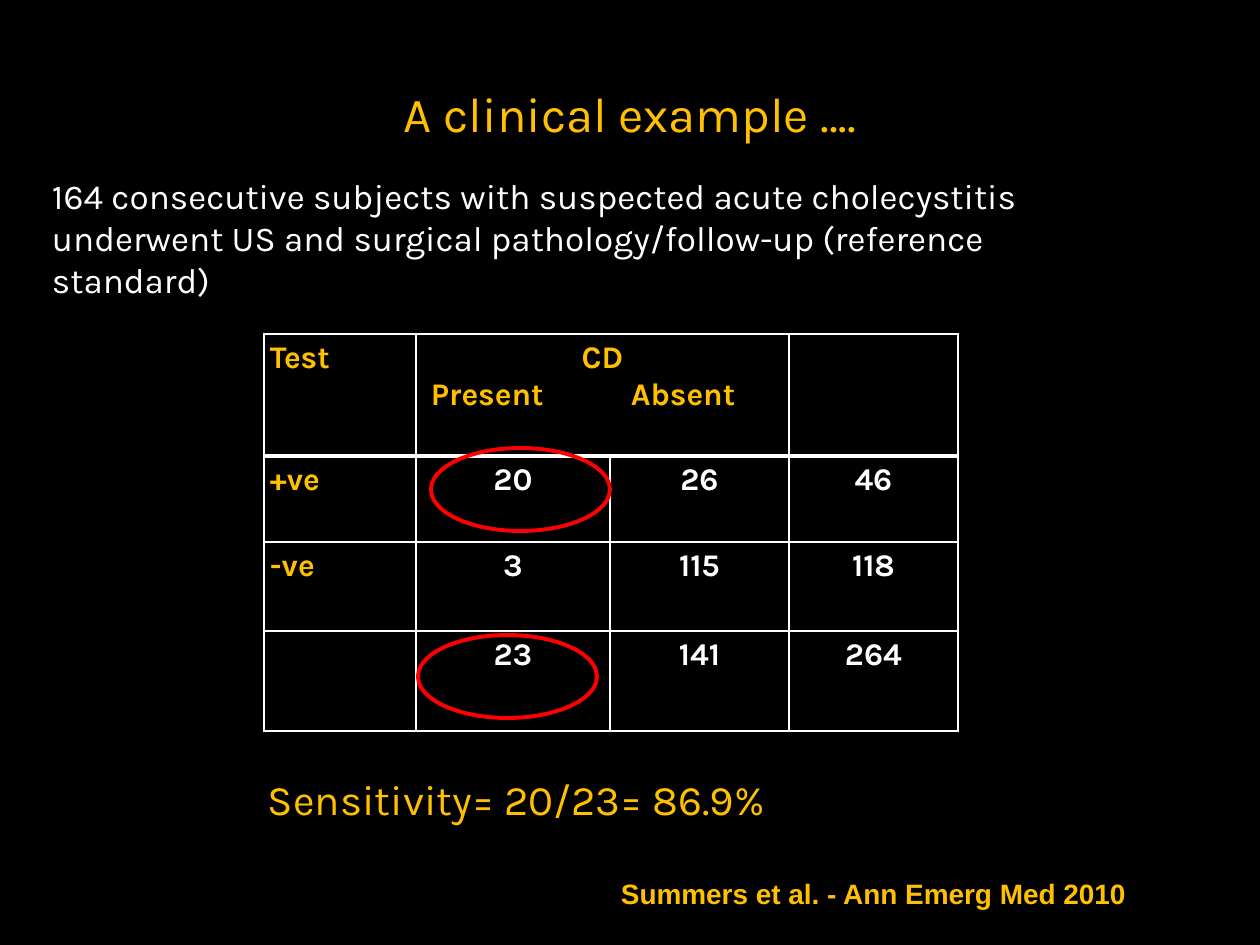
import pptx
import pptx.util
import pptx.dml.color
import pptx.enum.shapes
import pptx.enum.text
import pptx.oxml
import pptx.oxml.ns
from lxml import etree

RGB = pptx.dml.color.RGBColor
ALIGN = pptx.enum.text.PP_ALIGN
ANCHOR = pptx.enum.text.MSO_ANCHOR
BLACK, WHITE = RGB(0, 0, 0), RGB(255, 255, 255)
AMBER, RED = RGB(0xFF, 0xC0, 0x00), RGB(255, 0, 0)
PX = 914400 / 126
MARGIN = 6

# Content
TITLE = "A clinical example ….", (94, 16, 1072, 193)
STUDY = ("164 consecutive subjects with suspected acute cholecystitis "
         "underwent US and surgical pathology/follow-up (reference standard)",
         (46, 168, 1088, 612))
SENSITIVITY = "Sensitivity= 20/23= 86.9%", (262, 770, 532, 63)
CITATION = "Summers et al. - Ann Emerg Med 2010", (615, 872, 605, 43)
RESULTS = [
    ["Test", "CD\n\tPresent\tAbsent", "", ""],
    ["+ve", "20", "26", "46"],
    ["-ve", "3", "115", "118"],
    ["", "23", "141", "264"],
]
COLUMN_WIDTHS = [152, 194, 179, 169]
ROW_HEIGHTS = [122, 86, 89, 100]
TABLE_CORNER = 264, 334
HEADING_TABS = [9, 209]
CIRCLED = [(418, 635), (431, 448)]
CIRCLE_SIZE = 179, 83


def emu(*lengths):
    return [pptx.util.Emu(round(length * PX)) for length in lengths]


def write(frame, text, size, color, font="Karla", bold=False,
          align=ALIGN.LEFT, **spacing):
    frame.text = text
    for paragraph in frame.paragraphs:
        paragraph.alignment = align
        for name, value in spacing.items():
            setattr(paragraph, name, value)
        style = {"size": pptx.util.Pt(size), "name": font, "bold": bold}
        for name, value in style.items():
            setattr(paragraph.font, name, value)
            for run in paragraph.runs:
                setattr(run.font, name, value)
        for run in paragraph.runs:
            run.font.color.rgb = color


def set_margins(target):
    for side in ("left", "right", "top", "bottom"):
        setattr(target, "margin_" + side, emu(MARGIN)[0])


def add_text(slide, content, size, color, wrap=True, **style):
    text, box = content
    frame = slide.shapes.add_textbox(*emu(*box)).text_frame
    set_margins(frame)
    frame.word_wrap = wrap
    write(frame, text, size, color, **style)


def add_border(cell, side, points):
    properties = cell._tc.get_or_add_tcPr()
    line = etree.SubElement(properties, pptx.oxml.ns.qn("a:ln" + side),
                            w=str(pptx.util.Pt(points)))
    fill = etree.SubElement(line, pptx.oxml.ns.qn("a:solidFill"))
    etree.SubElement(fill, pptx.oxml.ns.qn("a:srgbClr"), val=str(WHITE))


def add_results(slide):
    box = (*TABLE_CORNER, sum(COLUMN_WIDTHS), sum(ROW_HEIGHTS))
    table = slide.shapes.add_table(len(ROW_HEIGHTS), len(COLUMN_WIDTHS),
                                   *emu(*box)).table
    table.first_row = table.horz_banding = False
    for column, width in zip(table.columns, emu(*COLUMN_WIDTHS)):
        column.width = width
    for row, height in zip(table.rows, emu(*ROW_HEIGHTS)):
        row.height = height
    table.cell(0, 1).merge(table.cell(0, 2))

    for r, values in enumerate(RESULTS):
        for c, value in enumerate(values):
            if (r, c) == (0, 2):
                value = ""
            cell = table.cell(r, c)
            set_margins(cell)
            write(cell.text_frame, value, 18,
                  AMBER if r == 0 or c == 0 else WHITE, bold=True,
                  align=ALIGN.LEFT if c == 0 else ALIGN.CENTER)
            # The rule under the heading row is heavier
            for side in "LRTB":
                heavy = (r, side) in ((0, "B"), (1, "T"))
                add_border(cell, side, 3 if heavy else 1)
            cell.fill.solid()
            cell.fill.fore_color.rgb = BLACK

    # Tab stops place the two sub-headings
    heading = table.cell(0, 1).text_frame.paragraphs[1]
    heading.alignment = ALIGN.LEFT
    tabs = etree.SubElement(heading._p.get_or_add_pPr(),
                            pptx.oxml.ns.qn("a:tabLst"))
    for stop in emu(*HEADING_TABS):
        etree.SubElement(tabs, pptx.oxml.ns.qn("a:tab"),
                         pos=str(stop), algn="l")


def main():
    deck = pptx.Presentation()
    deck.slide_width, deck.slide_height = emu(1260, 945)
    slide = deck.slides.add_slide(deck.slide_layouts[5])
    slide.background.fill.solid()
    slide.background.fill.fore_color.rgb = BLACK

    # Title
    title = slide.shapes.title
    text, box = TITLE
    for name, value in zip(("left", "top", "width", "height"), emu(*box)):
        setattr(title, name, value)
    set_margins(title.text_frame)
    title.text_frame.vertical_anchor = ANCHOR.MIDDLE
    write(title.text_frame, text, 28, AMBER, align=ALIGN.CENTER)

    # Study, table and conclusions
    add_text(slide, STUDY, 20, WHITE, space_before=pptx.util.Pt(4))
    add_results(slide)
    add_text(slide, SENSITIVITY, 24, AMBER, wrap=False, line_spacing=0.97)
    add_text(slide, CITATION, 16, AMBER, font="Arial", bold=True,
             line_spacing=0.97)

    # Rings around the numbers used for sensitivity
    for corner in CIRCLED:
        ring = slide.shapes.add_shape(pptx.enum.shapes.MSO_SHAPE.OVAL,
                                      *emu(*corner, *CIRCLE_SIZE))
        ring.shadow.inherit = False
        ring.fill.background()
        ring.line.color.rgb = RED
        ring.line.width = pptx.util.Pt(2.25)

    deck.save("out.pptx")


if __name__ == "__main__":
    main()
